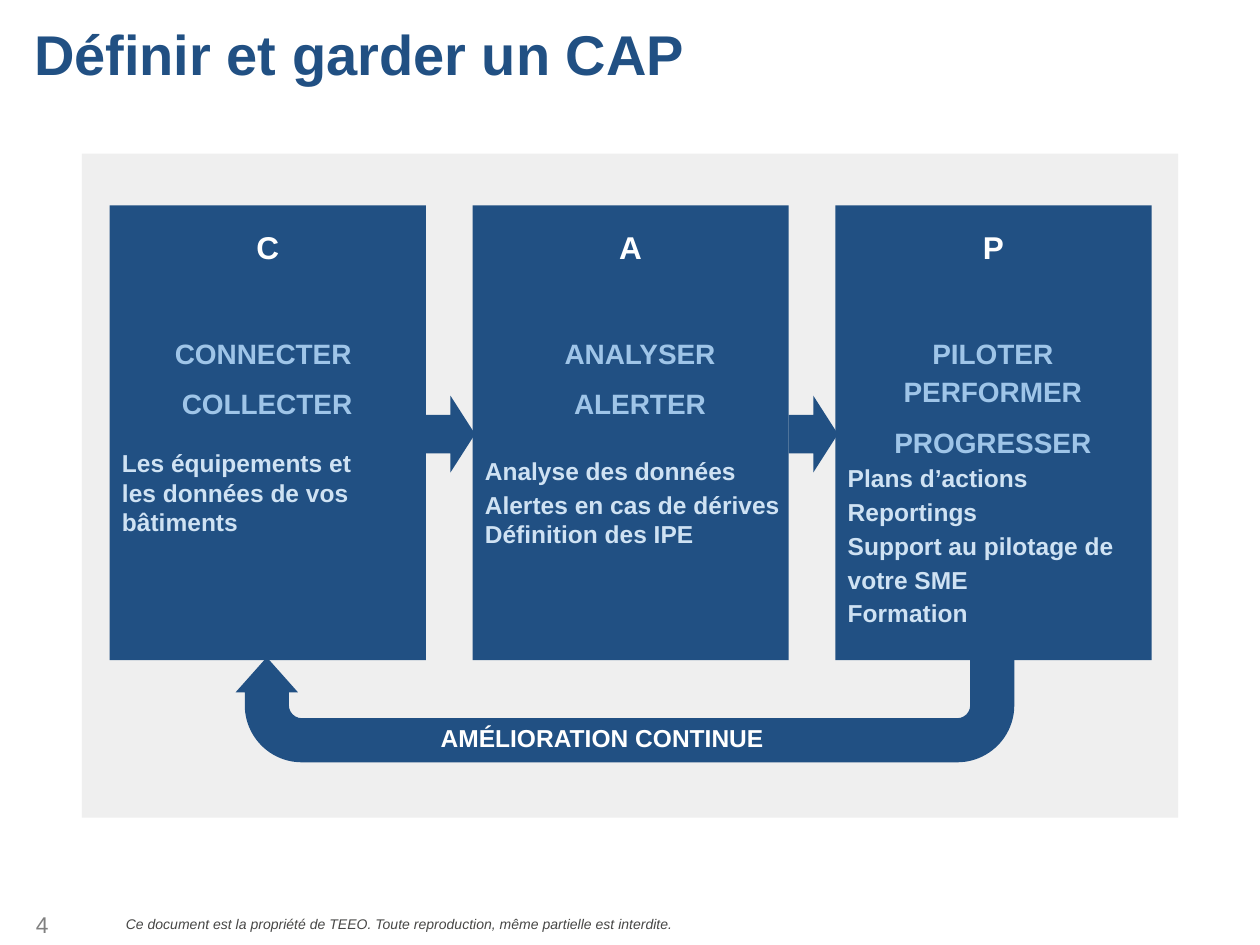
from dataclasses import dataclass

from pptx import Presentation
from pptx.dml.color import RGBColor as Rgb
from pptx.enum.shapes import MSO_SHAPE as Kind
from pptx.enum.text import MSO_ANCHOR as Anchor, MSO_AUTO_SIZE as Fit, PP_ALIGN as Align
from pptx.util import Emu, Pt

SCALE = 9144
NAVY = Rgb(0x21, 0x50, 0x83)
SKY = Rgb(0x9F, 0xC5, 0xE8)
PALE = Rgb(0xCF, 0xE2, 0xF3)
PANEL = Rgb(0xEF, 0xEF, 0xEF)
WHITE = Rgb(0xFF, 0xFF, 0xFF)
GREY = Rgb(0x80, 0x80, 0x80)
DARK = Rgb(0x47, 0x47, 0x46)

LEFT, TOP, WIDE, HIGH, STEP = 87, 163, 251, 361, 288


@dataclass
class Line:
    text: str
    space: float = 1.15
    gap: int = 0


@dataclass
class Card:
    letter: str
    heads: list[Line]
    notes: list[Line]
    width: int = 250


CARDS = [
    Card("C",
         [Line("CONNECTER "), Line("COLLECTER", 1.5)],
         [Line("Les équipements et", 1, 16), Line("les données de vos bâtiments", 1)]),
    Card("A",
         [Line("ANALYSER"), Line("ALERTER", 1.5)],
         [Line("Analyse des données", gap=18), Line("Alertes en cas de dérives"),
          Line("Définition des IPE", 1)],
         266),
    Card("P",
         [Line("PILOTER"), Line("PERFORMER"), Line("PROGRESSER", 1.5)],
         [Line("Plans d’actions"), Line("Reportings"),
          Line("Support au pilotage de votre SME"), Line("Formation")]),
]


def px(n: int) -> Emu:
    return Emu(n * SCALE)


def frame(box, pad: int = 10, anchor=Anchor.TOP):
    body = box.text_frame
    body.word_wrap = True
    body.auto_size = Fit.NONE
    body.vertical_anchor = anchor
    body.margin_left = body.margin_right = px(10)
    body.margin_top = body.margin_bottom = px(pad)
    return body


def write(para, text: str, *, size: int, color: Rgb, bold: bool = True,
          italic: bool = False, align=Align.LEFT, space: float = 1, gap: int = 0) -> None:
    para.alignment = align
    para.line_spacing = space
    para.space_before = Pt(gap)
    run = para.add_run()
    run.text = text
    font = run.font
    font.name = "Arial"
    font.size = Pt(size)
    font.bold = bold
    font.italic = italic
    font.color.rgb = color


def label(slide, text: str, x: int, y: int, w: int, h: int, pad: int = 10, **form) -> None:
    box = slide.shapes.add_textbox(px(x), px(y), px(w), px(h))
    write(frame(box, pad).paragraphs[0], text, **form)


def solid(slide, kind, x: int, y: int, w: int, h: int, color: Rgb = NAVY):
    shape = slide.shapes.add_shape(kind, px(x), px(y), px(w), px(h))
    shape.shadow.inherit = False
    shape.fill.solid()
    shape.fill.fore_color.rgb = color
    shape.line.fill.background()
    return shape


def draw(slide, card: Card, x: int) -> None:
    solid(slide, Kind.RECTANGLE, x, TOP, WIDE, HIGH)
    label(slide, card.letter, x, 171, WIDE, 50, size=18, color=WHITE, align=Align.CENTER)
    box = slide.shapes.add_textbox(px(x), px(253), px(card.width), px(271))
    body = frame(box)
    rows = [(row, 16, SKY, Align.CENTER) for row in card.heads]
    rows += [(row, 14, PALE, Align.LEFT) for row in card.notes]
    for i, (row, size, color, align) in enumerate(rows):
        para = body.add_paragraph() if i else body.paragraphs[0]
        write(para, row.text, size=size, color=color, align=align,
              space=row.space, gap=row.gap)


def cycle(slide) -> None:
    turn = solid(slide, Kind.U_TURN_ARROW, 187, 502, 618, 103)
    turn.rotation = 180
    for i, part in enumerate((0.34, 0.24, 0.27, 0.44, 0.81)):
        turn.adjustments[i] = part
    label(slide, "AMÉLIORATION CONTINUE", 180, 564, 596, 44,
          size=14, color=WHITE, align=Align.CENTER)


def main() -> None:
    deck = Presentation()
    deck.slide_width, deck.slide_height = px(1000), px(750)
    slide = deck.slides.add_slide(deck.slide_layouts[5])

    title = slide.shapes.title
    title.left, title.top, title.width, title.height = px(17), px(0), px(1145), px(85)
    write(frame(title, 5, Anchor.MIDDLE).paragraphs[0], "Définir et garder un CAP",
          size=32, color=NAVY)

    solid(slide, Kind.RECTANGLE, 65, 122, 870, 527, PANEL)
    cycle(slide)
    for i, card in enumerate(CARDS):
        x = LEFT + i * STEP
        draw(slide, card, x)
        if i < len(CARDS) - 1:
            solid(slide, Kind.RIGHT_ARROW, x + WIDE, 314, 39, 61)

    label(slide, "Ce document est la propriété de TEEO. Toute reproduction, "
          "même partielle est interdite.", 90, 722, 693, 24, 5,
          size=8, color=DARK, bold=False, italic=True)
    label(slide, "4", 0, 718, 67, 32, 5,
          size=13, color=GREY, bold=False, align=Align.CENTER)
    deck.save("out.pptx")


if __name__ == "__main__":
    main()
